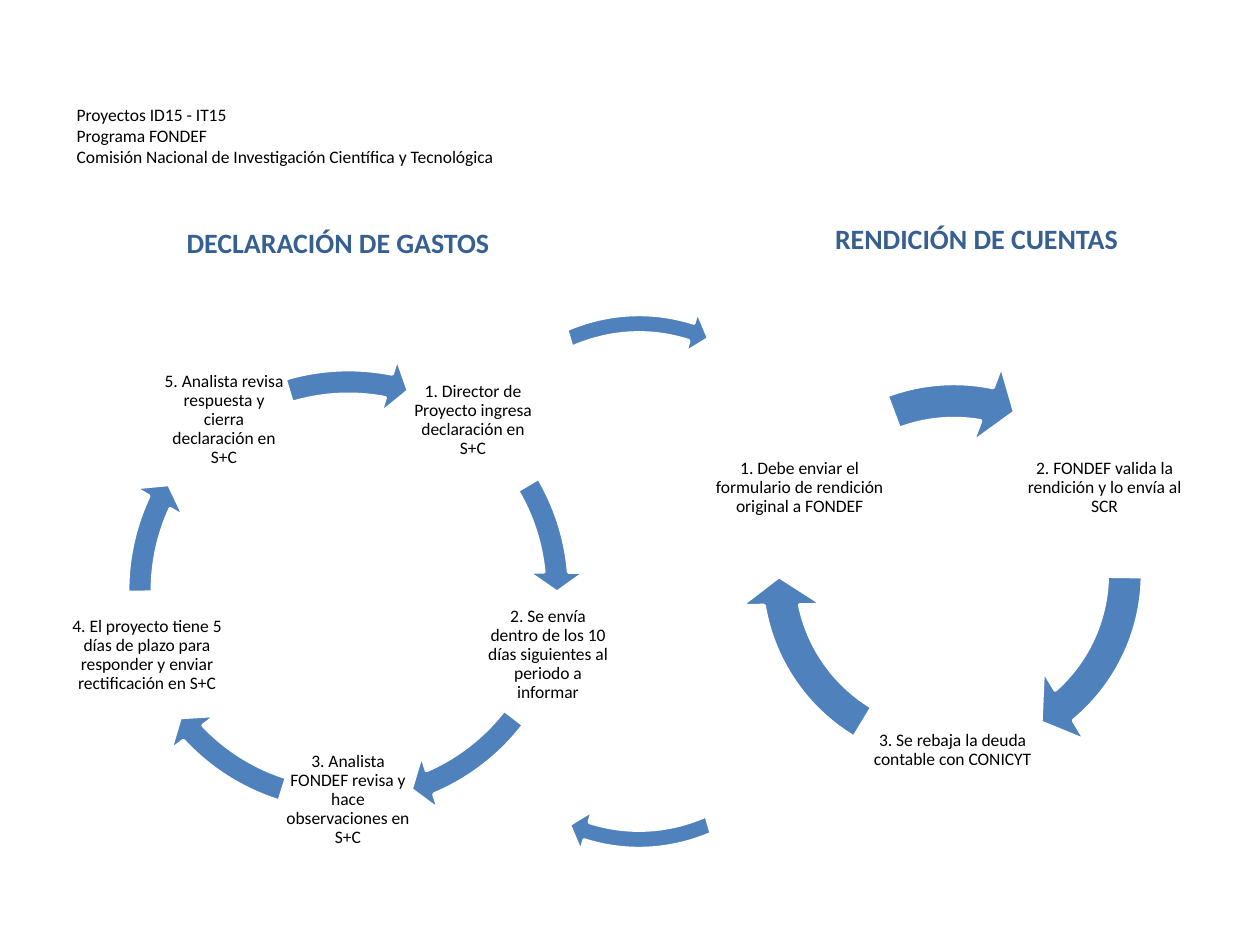
from dataclasses import dataclass

from pptx import Presentation
from pptx.dml.color import RGBColor
from pptx.enum.shapes import MSO_SHAPE
from pptx.enum.text import MSO_ANCHOR, MSO_AUTO_SIZE, PP_ALIGN
from pptx.util import Emu, Inches, Pt

EMU_PER_PX = 914400 / 126
CIRCULAR_ARROW = MSO_SHAPE.CIRCULAR_ARROW
CENTER, LEFT = PP_ALIGN.CENTER, PP_ALIGN.LEFT
MIDDLE = MSO_ANCHOR.MIDDLE
NO_AUTOFIT, GROW = MSO_AUTO_SIZE.NONE, MSO_AUTO_SIZE.SHAPE_TO_FIT_TEXT

BLACK = RGBColor(0x00, 0x00, 0x00)
WHITE = RGBColor(0xFF, 0xFF, 0xFF)
ARROW_BLUE = RGBColor(0x4F, 0x81, 0xBD)
HEADING_BLUE = RGBColor(0x37, 0x60, 0x92)


@dataclass(frozen=True)
class Area:
    left: int
    top: int
    width: int
    height: int


@dataclass(frozen=True)
class ArrowStyle:
    """Band and head widths are shares of the ring; head_angle is in degrees."""
    band: float
    head_angle: float
    head: float


@dataclass(frozen=True)
class Arrow:
    """An arc running clockwise between two angles, in degrees from the right."""
    ring: Area
    start: float
    end: float
    rotation: int = 0


@dataclass(frozen=True)
class Step:
    text: str
    area: Area
    arrow: Arrow


@dataclass(frozen=True)
class Cycle:
    heading: str
    heading_area: Area
    style: ArrowStyle
    steps: tuple[Step, ...]


EXPENSE_RING = Area(111, 353, 475, 475)
ACCOUNT_RING = Area(738, 360, 428, 428)
LINK_RING = Area(408, 302, 462, 559)

CYCLES = (
    Cycle("DECLARACIÓN DE GASTOS", Area(74, 219, 528, 47), ArrowStyle(0.052, 5.59, 0.061), (
        Step("1. Director de Proyecto ingresa declaración en S+C",
             Area(410, 357, 126, 126), Arrow(EXPENSE_RING, 329.42, 354.91)),
        Step("2. Se envía dentro de los 10 días siguientes al periodo a informar",
             Area(485, 592, 126, 126), Arrow(EXPENSE_RING, 37.53, 66.94)),
        Step("3. Analista FONDEF revisa y hace observaciones en S+C",
             Area(285, 737, 126, 126), Arrow(Area(108, 353, 475, 475), 107.47, 136.88)),
        Step("4. El proyecto tiene 5 días de plazo para responder y enviar rectificación en S+C",
             Area(64, 592, 166, 126), Arrow(EXPENSE_RING, 179.5, 204.99)),
        Step("5. Analista revisa respuesta y cierra declaración en S+C",
             Area(161, 357, 126, 126), Arrow(EXPENSE_RING, 253.29, 281.12)),
    )),
    Cycle("RENDICIÓN DE CUENTAS", Area(746, 215, 461, 47), ArrowStyle(0.082, 9.59, 0.096), (
        Step("2. FONDEF valida la rendición y lo envía al SCR",
             Area(1014, 397, 181, 181), Arrow(ACCOUNT_RING, 0.83, 49.45)),
        Step("3. Se rebaja la deuda contable con CONICYT",
             Area(862, 660, 181, 181), Arrow(ACCOUNT_RING, 120.96, 169.58)),
        Step("1. Debe enviar el formulario de rendición original a FONDEF",
             Area(709, 397, 181, 181), Arrow(Area(740, 360, 428, 428), 249.42, 280.99)),
    )),
)
LINK_STYLE = ArrowStyle(0.04, 4.17, 0.047)
LINKS = tuple(Arrow(LINK_RING, 253.98, 281.85, rotation) for rotation in (0, 180))
TITLE = """Proyectos ID15 - IT15
Programa FONDEF
Comisión Nacional de Investigación Científica y Tecnológica"""


def px(length: int) -> Emu:
    return Emu(round(length * EMU_PER_PX))


def bounds(area: Area) -> tuple[Emu, ...]:
    return px(area.left), px(area.top), px(area.width), px(area.height)


def write(frame, text: str, size: int, color: RGBColor, align=CENTER, bold: bool = False):
    """Fill the frame's only paragraph; newlines become line breaks."""
    frame.word_wrap = True
    para = frame.paragraphs[0]
    para.text = text
    para.alignment = align
    for span in para.runs:
        span.font.name = "Calibri"
        span.font.size = Pt(size)
        span.font.bold = bold
        span.font.color.rgb = color
    return para


def add_heading(page, cycle: Cycle) -> None:
    frame = page.shapes.add_textbox(*bounds(cycle.heading_area)).text_frame
    write(frame, cycle.heading, 16, HEADING_BLUE, bold=True)
    frame.auto_size = GROW


def add_step_text(page, step: Step) -> None:
    frame = page.shapes.add_textbox(*bounds(step.area)).text_frame
    frame.margin_left = frame.margin_right = px(1)
    frame.margin_top = frame.margin_bottom = px(1)
    frame.vertical_anchor = MIDDLE
    para = write(frame, step.text, 10, BLACK)
    para.line_spacing = 0.9
    para.space_after = Pt(3.5)


def add_arrow(page, arrow: Arrow, style: ArrowStyle) -> None:
    shape = page.shapes.add_shape(CIRCULAR_ARROW, *bounds(arrow.ring))
    angles = [angle * 0.6 for angle in (style.head_angle, arrow.end, arrow.start)]
    for index, value in enumerate((style.band, *angles, style.head)):
        shape.adjustments[index] = value
    shape.rotation = arrow.rotation
    shape.shadow.inherit = False
    shape.fill.solid()
    shape.fill.fore_color.rgb = ARROW_BLUE
    shape.line.color.rgb = WHITE
    shape.line.width = Pt(2)


def set_title(page) -> None:
    title = page.shapes.title
    title.left, title.top, title.width, title.height = bounds(Area(64, 66, 984, 140))
    title.text_frame.vertical_anchor = MIDDLE
    title.text_frame.auto_size = NO_AUTOFIT
    write(title.text_frame, TITLE, 10, BLACK, LEFT)


def main() -> None:
    deck = Presentation()
    deck.slide_width, deck.slide_height = Inches(10), Inches(7.5)
    page = deck.slides.add_slide(deck.slide_layouts[5])
    set_title(page)
    for cycle in CYCLES:
        add_heading(page, cycle)
        for step in cycle.steps:
            add_step_text(page, step)
            add_arrow(page, step.arrow, cycle.style)
    for link in LINKS:
        add_arrow(page, link, LINK_STYLE)
    deck.save("out.pptx")


if __name__ == "__main__":
    main()
